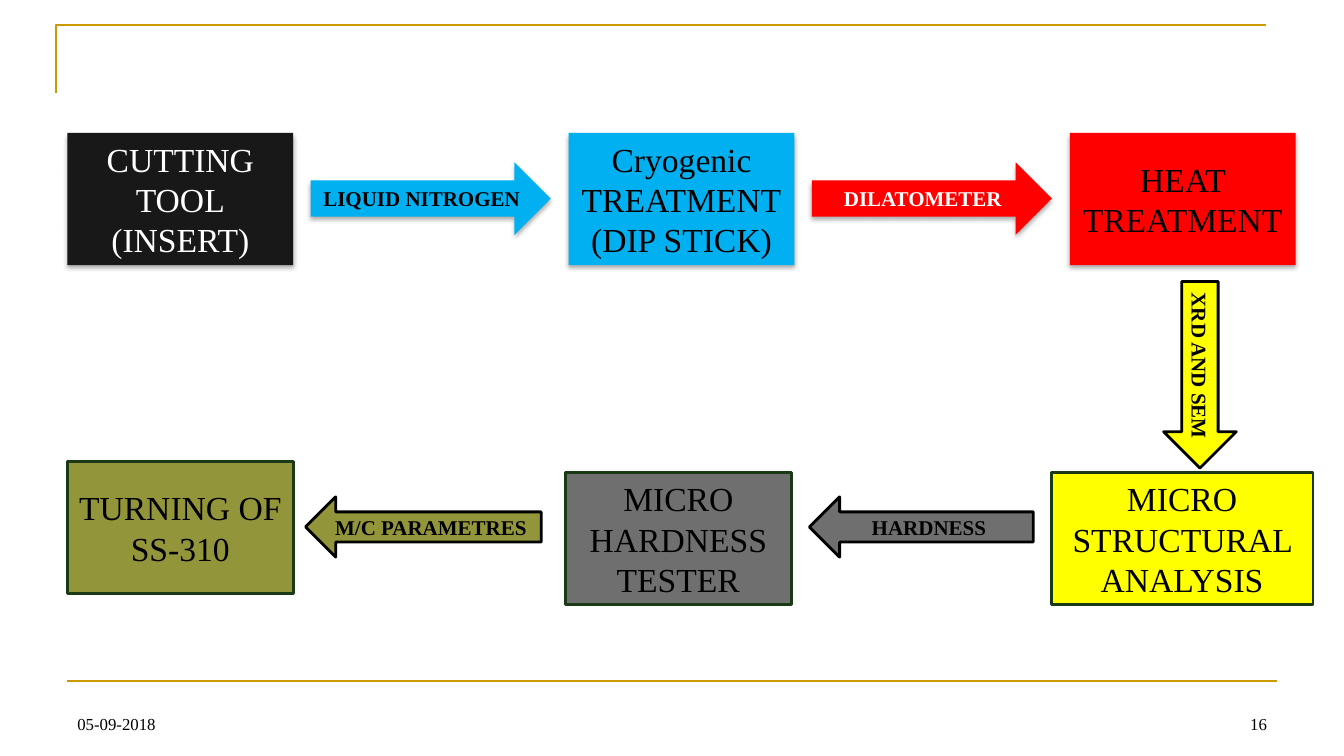
from lxml.etree import SubElement
from pptx import Presentation
from pptx.dml.color import RGBColor
from pptx.enum.shapes import MSO_CONNECTOR, MSO_SHAPE
from pptx.enum.text import MSO_ANCHOR, PP_ALIGN
from pptx.oxml import parse_xml
from pptx.oxml.ns import qn
from pptx.util import Cm, Pt

NS = "http://schemas.openxmlformats.org/drawingml/2006/main"
SHADE = f"""<a:effectLst xmlns:a="{NS}">
<a:outerShdw blurRad="{Pt(3.5)}" dist="{Pt(2.2)}" dir="5400000" rotWithShape="0">
<a:srgbClr val="000000"><a:alpha val="32000"/></a:srgbClr>
</a:outerShdw></a:effectLst>"""


def tint(code):
    return RGBColor.from_string(code)


def write(shape, text, size=24, color="000000", bold=False,
          align=PP_ALIGN.CENTER, anchor=MSO_ANCHOR.MIDDLE):
    frame = shape.text_frame
    frame.word_wrap = True
    frame.vertical_anchor = anchor
    frame.text = text
    for para in frame.paragraphs:
        para.alignment = align
        font = para.runs[0].font
        font.name = "Times New Roman"
        font.size = Pt(size)
        font.bold = bold
        font.color.rgb = tint(color)


deck = Presentation()
deck.slide_width = Cm(33.87)
deck.slide_height = Cm(19.05)
slide = deck.slides.add_slide(deck.slide_layouts[6])
shapes = slide.shapes

build = shapes.build_freeform(Cm(1.42), Cm(2.34))
build.add_line_segments([(Cm(1.42), Cm(0.64)), (Cm(31.9), Cm(0.64))], close=False)
frame = build.convert_to_shape()
frame.fill.background()
frame.shadow.inherit = False
rule = shapes.add_connector(MSO_CONNECTOR.STRAIGHT, Cm(1.7), Cm(17.15), Cm(32.18), Cm(17.15))
SubElement(rule.element.spPr, qn("a:effectLst"))
for trim in (frame, rule):
    trim.line.color.rgb = tint("CC9900")
    trim.line.width = Pt(1.5)

BOX, RIGHT, LEFT = MSO_SHAPE.RECTANGLE, MSO_SHAPE.RIGHT_ARROW, MSO_SHAPE.LEFT_ARROW
BLACK, WHITE = "000000", "FFFFFF"
YELLOW, GRAY, OLIVE, BLUE, RED = "FFFF00", "6F6F6F", "93953B", "00B0F0", "FF0000"
low = [
    (RIGHT, 27.89, 8.53, 4.7, 1.83, YELLOW, "XRD AND SEM"),
    (BOX, 26.49, 11.91, 6.6, 3.33, YELLOW, "MICRO\nSTRUCTURAL ANALYSIS"),
    (BOX, 14.25, 11.91, 5.69, 3.33, GRAY, "MICRO HARDNESS TESTER"),
    (LEFT, 20.4, 12.52, 5.64, 1.52, GRAY, "HARDNESS"),
    (LEFT, 7.7, 12.52, 5.94, 1.52, OLIVE, "M/C PARAMETRES"),
    (BOX, 1.7, 11.63, 5.69, 3.33, OLIVE, "TURNING OF SS-310"),
]
for kind, x, y, w, h, fill, text in low:
    step = shapes.add_shape(kind, Cm(x), Cm(y), Cm(w), Cm(h))
    step.shadow.inherit = False
    step.fill.solid()
    step.fill.fore_color.rgb = tint(fill)
    step.line.color.rgb = tint("1A3A15" if kind == BOX else BLACK)
    step.line.width = Pt(2)
    if kind == RIGHT:
        step.rotation = 90
    write(step, text, size=24 if kind == BOX else 15, bold=kind != BOX)

top = [
    (BOX, "181818", WHITE, "CUTTING TOOL\n(INSERT)"),
    (RIGHT, BLUE, BLACK, "LIQUID NITROGEN"),
    (BOX, BLUE, BLACK, "Cryogenic TREATMENT\n(DIP STICK)"),
    (RIGHT, RED, WHITE, "DILATOMETER"),
    (BOX, RED, BLACK, "HEAT TREATMENT"),
]
for i, (kind, fill, color, text) in enumerate(top):
    x, y, w, h = (1.7, 3.35, 5.69, 3.33) if kind == BOX else (7.83, 4.09, 6.05, 1.83)
    step = shapes.add_shape(kind, Cm(x + i // 2 * 12.63), Cm(y), Cm(w), Cm(h))
    step.fill.solid()
    step.fill.fore_color.rgb = tint(fill)
    step.line.fill.background()
    step.element.spPr.append(parse_xml(SHADE))
    write(step, text, size=24 if kind == BOX else 15, color=color, bold=kind != BOX)

for x, text, align in [(1.7, "05-09-2018", PP_ALIGN.LEFT), (24.28, "16", PP_ALIGN.RIGHT)]:
    foot = shapes.add_textbox(Cm(x), Cm(17.35), Cm(7.9), Cm(1.27))
    write(foot, text, size=12, align=align, anchor=MSO_ANCHOR.BOTTOM)

deck.save("out.pptx")
